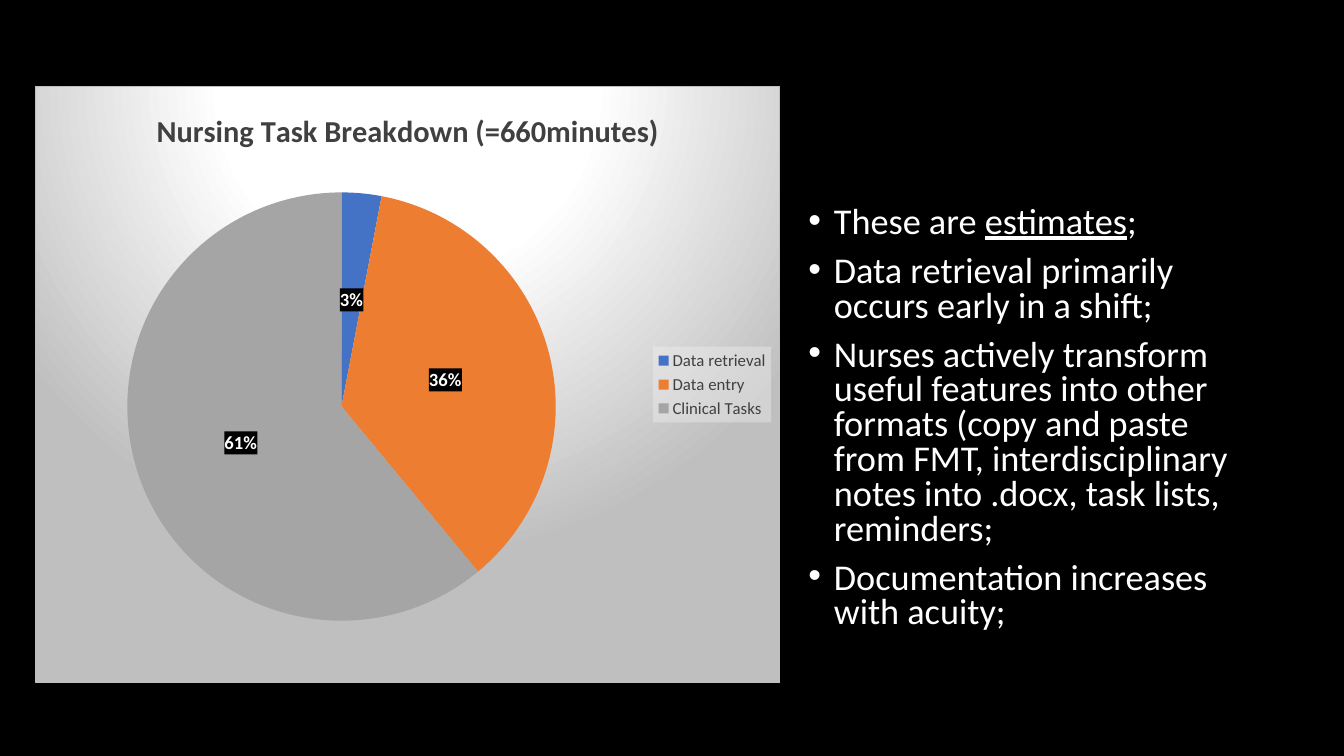
from lxml import etree
from pptx import Presentation
from pptx.chart.data import CategoryChartData
from pptx.dml.color import RGBColor
from pptx.enum.chart import XL_CHART_TYPE as ChartType
from pptx.enum.chart import XL_LABEL_POSITION as LabelPosition
from pptx.enum.chart import XL_LEGEND_POSITION as LegendPosition
from pptx.enum.text import MSO_ANCHOR as Anchor
from pptx.enum.text import MSO_AUTO_SIZE as AutoSize
from pptx.oxml import parse_xml
from pptx.oxml.ns import qn
from pptx.util import Cm, Pt

# Content
FONT = "Calibri"
CHART_TITLE = "Nursing Task Breakdown (=660minutes)"
TASKS = [
    ("Data retrieval", 3, "4472C4"),
    ("Data entry", 36, "ED7D31"),
    ("Clinical Tasks", 61, "A5A5A5"),
]
# Each bullet is a list of (words, underlined)
BULLETS = [
    [("These are ", False), ("estimates", True), (";", False)],
    [("Data retrieval primarily occurs early in a shift;", False)],
    [("Nurses actively transform useful features into other formats "
      "(copy and paste from FMT, interdisciplinary notes into .docx, "
      "task lists, reminders;", False)],
    [("Documentation increases with acuity;", False)],
]
PLOT = {"x": 0.123, "y": 0.105, "w": 0.576, "h": 0.864}
NAMESPACES = (
    'xmlns:c="http://schemas.openxmlformats.org/drawingml/2006/chart" '
    'xmlns:a="http://schemas.openxmlformats.org/drawingml/2006/main"'
)


def color(value):
    return RGBColor.from_string(value)


def style(font, size, value, bold=False):
    font.name, font.size, font.bold = FONT, Pt(size), bold
    font.color.rgb = color(value)


def shape_properties(content):
    return parse_xml(f"<c:spPr {NAMESPACES}>{content}</c:spPr>")


def see_through(value, percent):
    return shape_properties(
        f'<a:solidFill><a:srgbClr val="{value}">'
        f'<a:alpha val="{percent * 1000}"/></a:srgbClr></a:solidFill>')


# Page
deck = Presentation()
deck.slide_width, deck.slide_height = Cm(33.87), Cm(19.05)
page = deck.slides.add_slide(deck.slide_layouts[1])
page.background.fill.solid()
page.background.fill.fore_color.rgb = color("000000")
title = page.shapes.title
title.element.getparent().remove(title.element)

# Bullet list
body = page.placeholders[1]
body.left, body.top, body.width, body.height = Cm(20.12), Cm(5.08), Cm(11.4), Cm(12.09)
frame = body.text_frame
frame.word_wrap = True
frame.auto_size = AutoSize.NONE
frame.vertical_anchor = Anchor.TOP
for index, spans in enumerate(BULLETS):
    para = frame.add_paragraph() if index else frame.paragraphs[0]
    para.line_spacing, para.space_before = 0.8, Pt(10)
    properties = para._p.get_or_add_pPr()
    properties.set("marL", str(Cm(0.64)))
    properties.set("indent", str(-Cm(0.64)))
    etree.SubElement(properties, qn("a:buFont")).set("typeface", "Arial")
    etree.SubElement(properties, qn("a:buChar")).set("char", "•")
    for words, underlined in spans:
        span = para.add_run()
        span.text = words
        style(span.font, 25.9, "FFFFFF")
        span.font.underline = underlined

# Pie chart
data = CategoryChartData()
data.categories = [name for name, _, _ in TASKS]
data.add_series("Series 1", [share for _, share, _ in TASKS])
chart = page.shapes.add_chart(
    ChartType.PIE, Cm(0.89), Cm(2.16), Cm(18.77), Cm(15.06), data).chart
style(chart.font, 10, "FFFFFF")
chart.has_title = True
chart.chart_title.text_frame.text = CHART_TITLE
style(chart.chart_title.text_frame.paragraphs[0].runs[0].font, 21.7, "404040", True)
chart.chart_title.include_in_layout = False

# Slices and their labels
plot = chart.plots[0]
plot.vary_by_categories = True
series = plot.series[0]
for index, (_, _, fill) in enumerate(TASKS):
    slice_fill = series.points[index].format.fill
    slice_fill.solid()
    slice_fill.fore_color.rgb = color(fill)
labels = series.data_labels
labels.show_percentage, labels.show_value = True, False
labels.number_format, labels.number_format_is_linked = "0%", False
labels.position = LabelPosition.CENTER
style(labels.font, 13.3, "FFFFFF", True)
labels._element.find(qn("c:txPr")).addprevious(see_through("000000", 75))

# Legend
chart.has_legend = True
legend = chart.legend
legend.position = LegendPosition.RIGHT
legend.include_in_layout = False
style(legend.font, 12, "404040")
legend._element.find(qn("c:txPr")).addprevious(see_through("F2F2F2", 39))

# Plot area placed by fractions of the chart
plot_area = chart._chartSpace.chart.plotArea
for old_layout in plot_area.findall(qn("c:layout")):
    plot_area.remove(old_layout)
places = "".join(f'<c:{key} val="{value}"/>' for key, value in PLOT.items())
plot_area.insert(0, parse_xml(
    f'<c:layout {NAMESPACES}><c:manualLayout><c:layoutTarget val="inner"/>'
    f'<c:xMode val="edge"/><c:yMode val="edge"/>{places}'
    f"</c:manualLayout></c:layout>"))

# Round gradient and border behind the chart
stops = "".join(
    f'<a:gs pos="{position * 1000}"><a:srgbClr val="{value}"/></a:gs>'
    for position, value in [(0, "FFFFFF"), (39, "FFFFFF"), (100, "BFBFBF")])
chart._chartSpace.chart.addnext(shape_properties(
    f'<a:gradFill><a:gsLst>{stops}</a:gsLst><a:path path="circle">'
    '<a:fillToRect l="50000" t="-80000" r="50000" b="180000"/></a:path></a:gradFill>'
    f'<a:ln w="{Pt(0.75)}"><a:solidFill><a:srgbClr val="BFBFBF"/></a:solidFill></a:ln>'))

deck.save("out.pptx")
